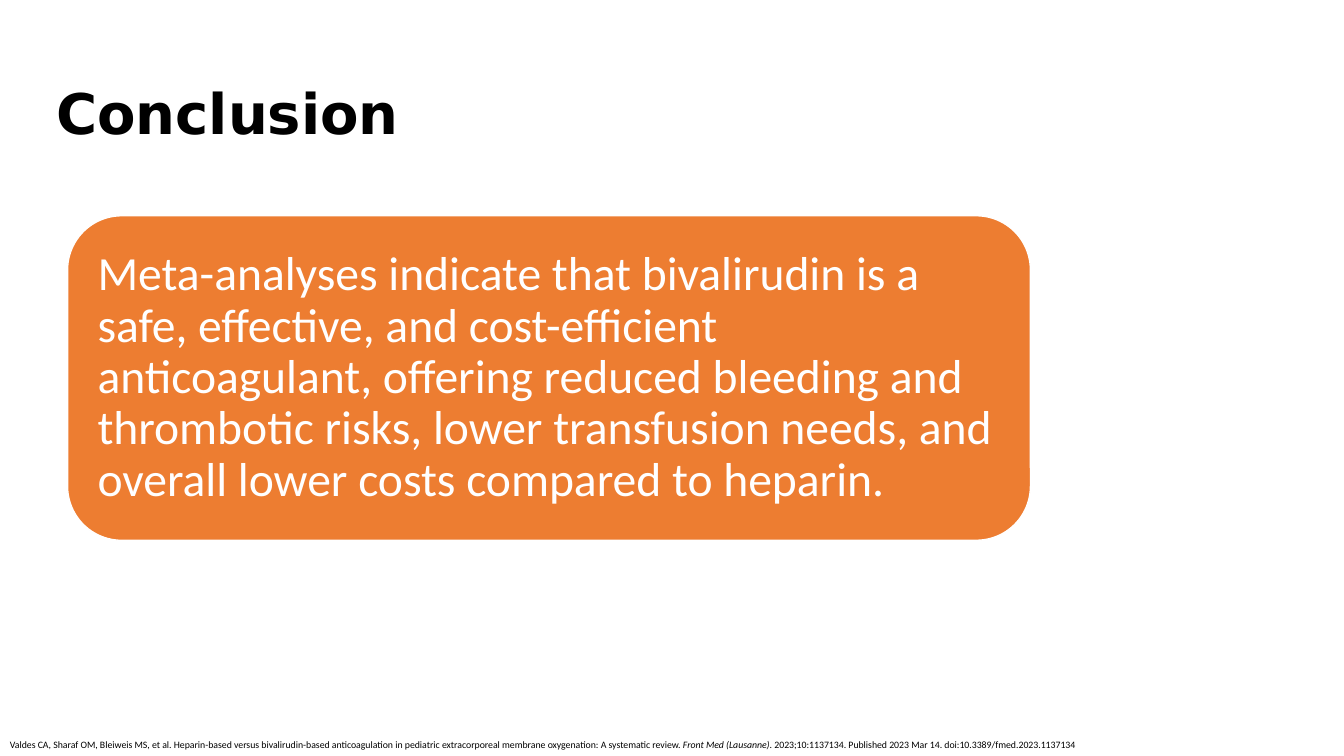
from pptx import Presentation
from pptx.dml.color import RGBColor
from pptx.enum.shapes import MSO_SHAPE
from pptx.enum.text import MSO_ANCHOR, PP_ALIGN
from pptx.util import Inches, Pt


def color(hex_value):
    """Return the colour for a hex string."""
    return RGBColor.from_string(hex_value)


def add_text(paragraph, text, font="Calibri", size=7, fill="000000", bold=False, italic=False):
    """Add a formatted run to a paragraph."""
    run = paragraph.add_run()
    run.text = text
    run.font.name = font
    run.font.size = Pt(size)
    run.font.bold = bold
    run.font.italic = italic
    run.font.color.rgb = color(fill)


class SlideBuilder:
    """Hold the style and the current slide."""

    accent = "ED7D31"
    light = "FFFFFF"
    heading_font = "DejaVu Sans"

    def __init__(self, presentation):
        """Add a title-only slide."""
        self.slide = presentation.slides.add_slide(presentation.slide_layouts[5])

    def title(self, text, left, top, width, height):
        """Place and format the title."""
        title = self.slide.shapes.title
        title.left, title.top = Inches(left), Inches(top)
        title.width, title.height = Inches(width), Inches(height)
        frame = title.text_frame
        frame.word_wrap = True
        frame.vertical_anchor = MSO_ANCHOR.MIDDLE
        paragraph = frame.paragraphs[0]
        paragraph.alignment = PP_ALIGN.LEFT
        paragraph.line_spacing = 0.9
        add_text(paragraph, text, font=self.heading_font, size=40, bold=True)

    def card(self, text, left, top, width, height):
        """Add a rounded card with its statement."""
        card = self.slide.shapes.add_shape(
            MSO_SHAPE.ROUNDED_RECTANGLE, Inches(left), Inches(top), Inches(width), Inches(height))
        card.shadow.inherit = False
        card.fill.solid()
        card.fill.fore_color.rgb = color(self.accent)
        card.line.color.rgb = color(self.light)
        card.line.width = Pt(1)
        frame = card.text_frame
        frame.word_wrap = True
        frame.vertical_anchor = MSO_ANCHOR.MIDDLE
        frame.margin_left = frame.margin_right = Inches(0.14)
        frame.margin_top = frame.margin_bottom = Inches(0.14)
        paragraph = frame.paragraphs[0]
        paragraph.alignment = PP_ALIGN.LEFT
        paragraph.line_spacing = 0.9
        add_text(paragraph, text, size=34, fill=self.light)

    def citation(self, parts, left, top, width, height):
        """Add a citation from pairs of text and italic setting."""
        box = self.slide.shapes.add_textbox(
            Inches(left), Inches(top), Inches(width), Inches(height))
        box.text_frame.word_wrap = True
        for text, italic in parts:
            add_text(box.text_frame.paragraphs[0], text, italic=italic)


def main():
    """Build and save the conclusion slide."""
    presentation = Presentation()
    presentation.slide_width = Inches(13.33)
    presentation.slide_height = Inches(7.5)
    builder = SlideBuilder(presentation)
    builder.title("Conclusion", 0.46, 0.8, 7.09, 0.71)
    builder.citation([
        ("Valdes CA, Sharaf OM, Bleiweis MS, et al. Heparin-based versus bivalirudin-based "
         "anticoagulation in pediatric extracorporeal membrane oxygenation: "
         "A systematic review. ", False),
        ("Front Med (Lausanne)", True),
        (". 2023;10:1137134. Published 2023 Mar 14. doi:10.3389/fmed.2023.1137134", False),
    ], 0, 7.28, 12.12, 0.22)
    builder.card(
        "Meta-analyses indicate that bivalirudin is a safe, effective, and cost-efficient "
        "anticoagulant, offering reduced bleeding and thrombotic risks, lower transfusion "
        "needs, and overall lower costs compared to heparin.", 0.67, 2.14, 9.55, 3.22)
    presentation.save("out.pptx")


if __name__ == "__main__":
    main()
